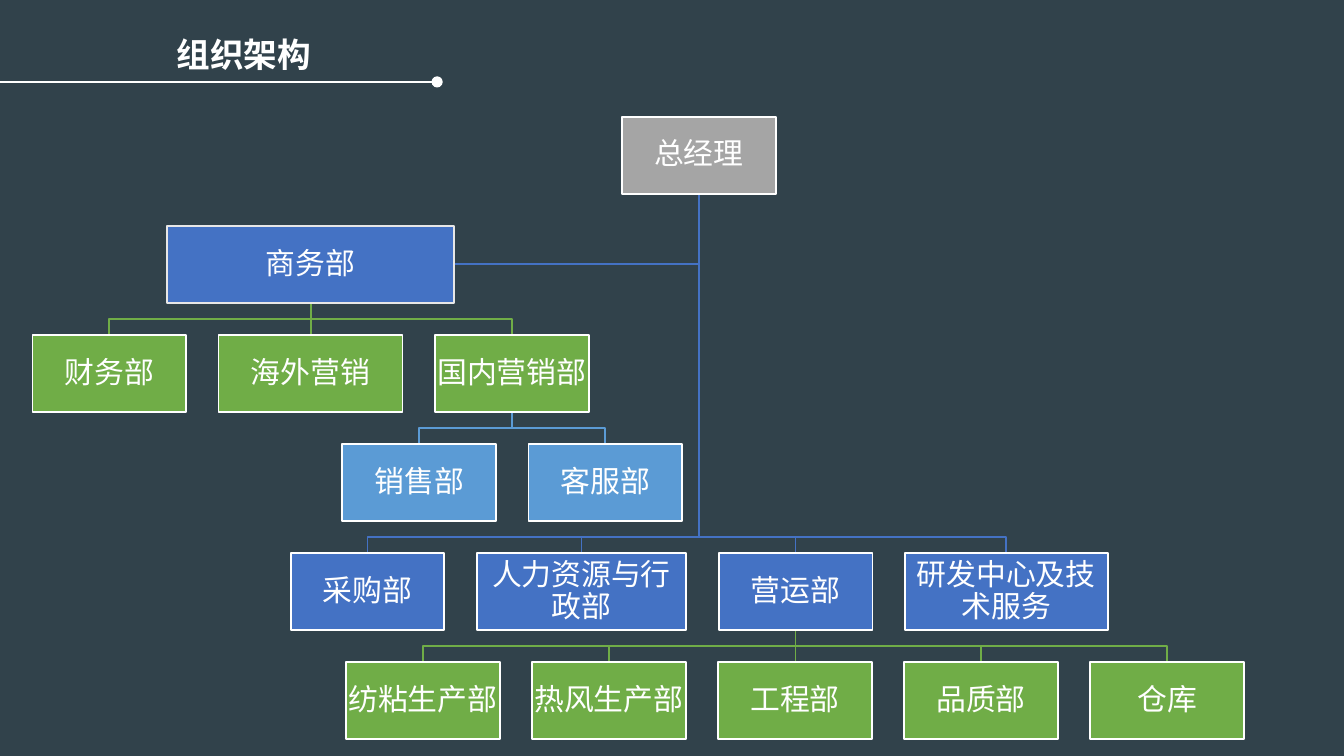
from lxml.etree import SubElement
from pptx import Presentation
from pptx.dml.color import RGBColor
from pptx.enum.shapes import MSO_CONNECTOR as Conn, MSO_SHAPE as Kind
from pptx.enum.text import MSO_ANCHOR as Anchor, MSO_AUTO_SIZE as Fit, PP_ALIGN as Align
from pptx.oxml.ns import qn
from pptx.util import Pt

WHITE, GREY, BLUE, GREEN, SKY = "FFFFFF", "A5A5A5", "4472C4", "70AD47", "5B9BD5"
CJK = "Noto Sans CJK SC"


def paint(part, color):
    if hasattr(part, "solid"):
        part.solid()
        part = part.fore_color
    else:
        part = part.color
    part.rgb = RGBColor.from_string(color)


def write(shape, text, inset, lead, look):
    frame = shape.text_frame
    form = dict(word_wrap=True, auto_size=Fit.NONE, vertical_anchor=Anchor.MIDDLE,
                margin_left=inset, margin_right=inset, margin_top=inset, margin_bottom=inset)
    for key, val in form.items():
        setattr(frame, key, val)
    para = frame.paragraphs[0]
    para.alignment, para.line_spacing = Align.CENTER, lead
    run = para.add_run()
    run.text = text
    for key, val in look.items():
        setattr(run.font, key, val)
    paint(run.font.fill, WHITE)
    # East Asian typeface
    SubElement(run.font._element, qn("a:ea"), typeface=CJK)


deck = Presentation()
deck.slide_width, deck.slide_height = Pt(720), Pt(405)
slide = deck.slides.add_slide(deck.slide_layouts[5])
paint(slide.background.fill, "31424B")
shapes = slide.shapes

# Title
title = shapes.title
place = dict(left=Pt(64), top=Pt(18), width=Pt(133.2), height=Pt(21.6))
for key, val in place.items():
    setattr(title, key, val)
write(title, "组织架构", 0, 1, dict(size=Pt(18), name=CJK, bold=True))

# Title rule with end dot
rule = shapes.add_connector(Conn.STRAIGHT, Pt(-0.7), Pt(43.9), Pt(234.7), Pt(43.9))
rule.line.width = Pt(1)
paint(rule.line, WHITE)
SubElement(rule._element.spPr, qn("a:effectLst"))
dot = shapes.add_shape(Kind.OVAL, Pt(231.7), Pt(41.4), Pt(5), Pt(5))
dot.shadow.inherit = False
dot.line.width = Pt(1)
paint(dot.fill, WHITE)
paint(dot.line, WHITE)

# Chart levels: left edge, fill, then (name, width, parent) for each box
TOP, STEP, HIGH, GAP, WIDE = 62.6, 58.45, 41.2, 17.3, 82.4
levels = [
    (333.2, GREY, [("总经理", WIDE, None)]),
    (89.4, BLUE, [("商务部", 154.1, "总经理")]),
    (17.4, GREEN, [("财务部", WIDE, "商务部"), ("海外营销", 98.6, "商务部"),
                   ("国内营销部", WIDE, "商务部")]),
    (183.4, SKY, [("销售部", WIDE, "国内营销部"), ("客服部", WIDE, "国内营销部")]),
    (155.7, BLUE, [("采购部", WIDE, "总经理"), ("人力资源与行政部", 112.3, "总经理"),
                   ("营运部", WIDE, "总经理"), ("研发中心及技术服务", 108.7, "总经理")]),
    (185.3, GREEN, [("纺粘生产部", WIDE, "营运部"), ("热风生产部", WIDE, "营运部"),
                    ("工程部", WIDE, "营运部"), ("品质部", WIDE, "营运部"),
                    ("仓库", WIDE, "营运部")]),
]
boxes = {}
for row, (left, color, items) in enumerate(levels):
    for name, wide, boss in items:
        boxes[name] = (left, TOP + row * STEP, wide, color, boss)
        left += wide + GAP

# Links from each parent to its children
for name, (left, top, wide, color, boss) in boxes.items():
    if boss is None:
        continue
    up = boxes[boss]
    head, foot, mid = up[0] + up[2] / 2, up[1] + HIGH, left + wide / 2
    if abs(head - mid) < 1:
        link = shapes.add_connector(Conn.STRAIGHT, Pt(head), Pt(foot), Pt(head), Pt(top))
        SubElement(link._element.spPr, qn("a:effectLst"))
    else:
        if name == "商务部":  # joins the trunk from the side
            side = top + HIGH / 2
            bends = [(head, side), (left + wide, side)]
        else:
            bus = top - GAP / 2
            bends = [(head, bus), (mid, bus), (mid, top)]
        pen = shapes.build_freeform(Pt(head), Pt(foot))
        pen.add_line_segments([(Pt(x), Pt(y)) for x, y in bends], close=False)
        link = pen.convert_to_shape()
        link.fill.background()
        link.shadow.inherit = False
    link.line.width = Pt(1)
    paint(link.line, color)

# Boxes
for name, (left, top, wide, color, boss) in boxes.items():
    box = shapes.add_shape(Kind.RECTANGLE, Pt(left), Pt(top), Pt(wide), Pt(HIGH))
    box.shadow.inherit = False
    box.line.width = Pt(1)
    paint(box.fill, color)
    paint(box.line, "E7E7E7" if name == "商务部" else WHITE)
    write(box, name, Pt(0.8), 0.9, dict(size=Pt(16), name="Calibri"))

deck.save("out.pptx")
